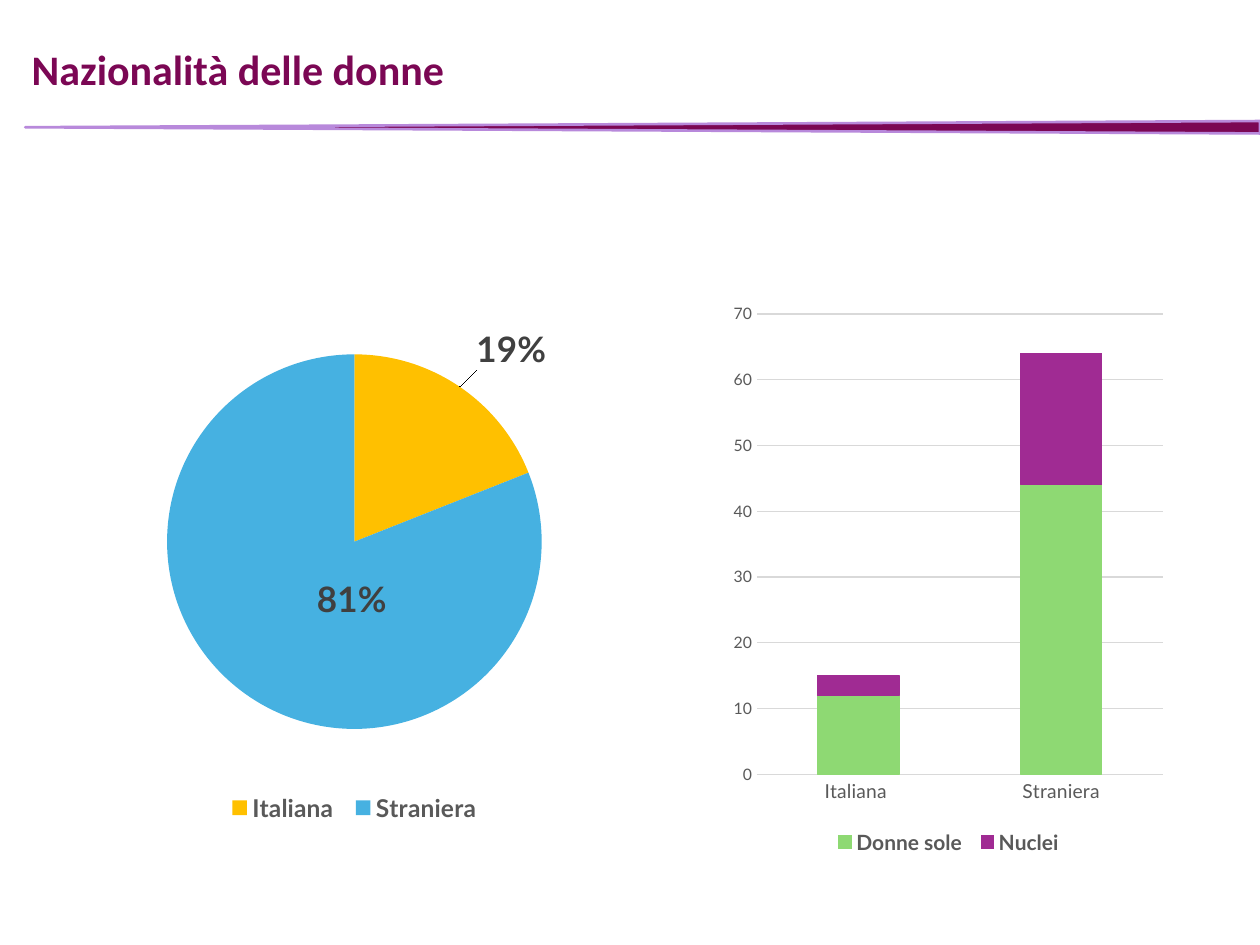
from dataclasses import dataclass
from typing import Any

from lxml import etree
from pptx import Presentation
from pptx import util as u
from pptx.chart.data import CategoryChartData
from pptx.dml.color import RGBColor
from pptx.enum import chart as ch, shapes, text
from pptx.oxml.ns import qn


@dataclass(frozen=True)
class Theme:
    title_font: str = "Calibri"
    chart_font: str = "Lato"
    plum: str = "7B0754"
    lilac: str = "B889DB"
    grey: str = "595959"
    dark: str = "404040"
    grid: str = "D9D9D9"
    pie: tuple[str, ...] = ("FFC000", "46B1E1")
    bars: tuple[str, ...] = ("8ED973", "A02B93")
    title_size: float = 24
    label_size: float = 20
    pie_legend_size: float = 14
    bar_legend_size: float = 12
    category_size: float = 11
    value_size: float = 9


@dataclass(frozen=True)
class Box:
    left: float
    top: float
    width: float
    height: float

    def lengths(self) -> tuple[u.Length, ...]:
        return tuple(u.Cm(v) for v in (self.left, self.top, self.width, self.height))


@dataclass(frozen=True)
class ChartPlan:
    kind: Any
    box: Box
    plot: Box  # fractions of the chart area
    series: dict[str, tuple[float, ...]]
    number_format: str
    legend_size: float


THEME = Theme()
CATEGORIES = ("Italiana ", "Straniera")
BARS = ChartPlan(ch.XL_CHART_TYPE.COLUMN_STACKED, Box(14.63, 5.87, 8.99, 11.46),
                 Box(0.07, 0.04, 0.91, 0.81),
                 {"Donne sole ": (12, 44), "Nuclei": (3, 20)}, "0",
                 THEME.bar_legend_size)
PIE = ChartPlan(ch.XL_CHART_TYPE.PIE, Box(0.81, 6.2, 12.67, 10.49),
                Box(0.2, 0.09, 0.6, 0.72), {"Series 1": (0.19, 0.81)}, "0%",
                THEME.pie_legend_size)


def apply(target: Any, values: dict[str, Any]) -> None:
    for name, value in values.items():
        setattr(target, name, value)


def set_font(font: Any, size: float, color: str, bold: bool = False,
             name: str = THEME.chart_font) -> None:
    apply(font, {"name": name, "size": u.Pt(size), "bold": bold})
    font.color.rgb = RGBColor.from_string(color)


def paint(fill: Any, color: str) -> None:
    fill.solid()
    fill.fore_color.rgb = RGBColor.from_string(color)


def set_line(line: Any, color: str, width: float = 0.75) -> None:
    paint(line.fill, color)
    line.width = u.Pt(width)


def manual_layout(values: dict[str, Any]) -> Any:
    layout = etree.Element(qn("c:layout"))
    manual = etree.SubElement(layout, qn("c:manualLayout"))
    for tag, value in values.items():
        etree.SubElement(manual, qn(f"c:{tag}")).set("val", str(value))
    return layout


def add_chart(s: Any, plan: ChartPlan) -> Any:
    data = CategoryChartData(number_format=plan.number_format)
    data.categories = CATEGORIES
    for name, values in plan.series.items():
        data.add_series(name, values)
    chart = s.shapes.add_chart(plan.kind, *plan.box.lengths(), data).chart
    apply(chart, {"has_title": False, "has_legend": True})
    set_font(chart.font, 10, "000000")
    apply(chart.legend, {"position": ch.XL_LEGEND_POSITION.BOTTOM,
                         "include_in_layout": False})
    set_font(chart.legend.font, plan.legend_size, THEME.grey, True)

    # Fixed plot area
    area = chart.plots[0]._element.getparent()
    for old in area.findall(qn("c:layout")):
        area.remove(old)
    p = plan.plot
    area.insert(0, manual_layout({
        "layoutTarget": "inner", "xMode": "edge", "yMode": "edge",
        "x": p.left, "y": p.top, "w": p.width, "h": p.height}))
    return chart


def add_title(s: Any, words: str) -> None:
    title = s.shapes.title
    apply(title, dict(zip(("left", "top", "width", "height"),
                          Box(0.46, 0.53, 23.83, 1.85).lengths())))
    tf = title.text_frame
    apply(tf, {"text": words, "word_wrap": True,
               "vertical_anchor": text.MSO_ANCHOR.MIDDLE,
               "margin_left": u.Cm(0.18), "margin_right": u.Cm(0.18),
               "margin_top": u.Cm(0.1), "margin_bottom": u.Cm(0.1)})
    p = tf.paragraphs[0]
    apply(p, {"alignment": text.PP_ALIGN.LEFT, "line_spacing": 0.9})
    set_font(p.runs[0].font, THEME.title_size, THEME.plum, True, THEME.title_font)


def add_wedge(s: Any) -> None:
    sp = s.shapes.add_shape(shapes.MSO_SHAPE.FLOWCHART_EXTRACT,
                            *Box(12.83, -9.88, 0.25, 24.89).lengths())
    sp.rotation = 270
    sp.shadow.inherit = False
    paint(sp.fill, THEME.plum)
    set_line(sp.line, THEME.lilac, 1.5)


def add_bars(s: Any) -> None:
    chart = add_chart(s, BARS)
    apply(chart.plots[0], {"gap_width": 150, "overlap": 100})
    for series, color in zip(chart.plots[0].series, THEME.bars):
        paint(series.format.fill, color)
        set_line(series.format.line, color)

    # Axes
    cat, val = chart.category_axis, chart.value_axis
    for axis, size in ((cat, THEME.category_size), (val, THEME.value_size)):
        apply(axis, {"major_tick_mark": ch.XL_TICK_MARK.NONE,
                     "minor_tick_mark": ch.XL_TICK_MARK.NONE})
        set_font(axis.tick_labels.font, size, THEME.grey)
    set_line(cat.format.line, THEME.grid)
    val.format.line.fill.background()
    apply(val, {"minimum_scale": 0, "maximum_scale": 70, "major_unit": 10})
    set_line(val.major_gridlines.format.line, THEME.grid)


def add_pie(s: Any) -> None:
    plot = add_chart(s, PIE).plots[0]
    plot.vary_by_categories = True
    series = plot.series[0]
    labels = series.data_labels
    apply(labels, {"show_value": True, "show_percentage": False,
                   "number_format": PIE.number_format,
                   "number_format_is_linked": False,
                   "position": ch.XL_LABEL_POSITION.BEST_FIT})
    set_font(labels.font, THEME.label_size, THEME.dark, True)

    # Slices, each with a label nudged from its usual place
    places = ((ch.XL_LABEL_POSITION.OUTSIDE_END, 0.02, -0.02),
              (ch.XL_LABEL_POSITION.CENTER, 0.08, -0.04))
    for i, (color, (position, dx, dy)) in enumerate(zip(THEME.pie, places)):
        point = series.points[i]
        paint(point.format.fill, color)
        label = point.data_label
        set_font(label.font, THEME.label_size, THEME.dark, True)
        label.position = position
        element = labels._element.findall(qn("c:dLbl"))[i]
        element.insert(1, manual_layout({"x": dx, "y": dy}))


def main() -> None:
    prs = Presentation()
    apply(prs, {"slide_width": u.Cm(25.4), "slide_height": u.Cm(19.05)})
    s = prs.slides.add_slide(prs.slide_layouts[5])
    add_title(s, "Nazionalità delle donne")
    add_bars(s)
    add_pie(s)
    add_wedge(s)
    prs.save("out.pptx")


if __name__ == "__main__":
    main()
